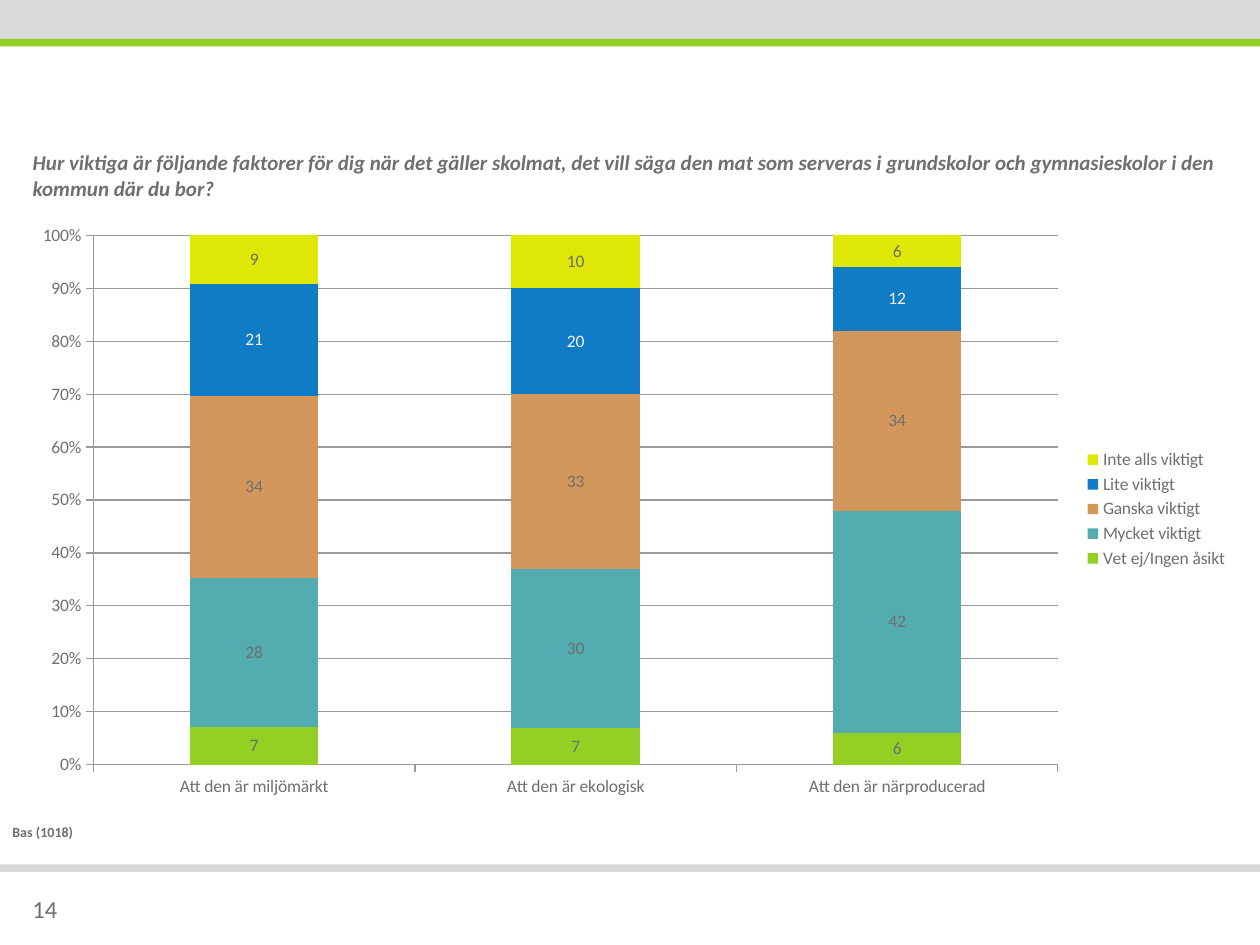
from lxml.etree import SubElement
from pptx import Presentation
from pptx.chart.data import CategoryChartData
from pptx.dml.color import RGBColor
from pptx.enum.chart import XL_CHART_TYPE, XL_LABEL_POSITION, XL_LEGEND_POSITION, XL_TICK_MARK
from pptx.enum.shapes import MSO_SHAPE
from pptx.enum.text import MSO_ANCHOR, MSO_AUTO_SIZE, PP_ALIGN
from pptx.oxml.ns import qn
from pptx.util import Inches, Pt

FONT = "Calibri"
GREY = RGBColor(0x6D, 0x6F, 0x71)
BAND = RGBColor(0xD9, 0xD9, 0xD9)
GREEN = RGBColor(0x93, 0xD0, 0x23)
TEAL = RGBColor(0x53, 0xAC, 0xAF)
TAN = RGBColor(0xD3, 0x97, 0x5B)
BLUE = RGBColor(0x11, 0x7C, 0xC6)
YELLOW = RGBColor(0xDE, 0xE7, 0x05)
PALE = RGBColor(0xF2, 0xF2, 0xF2)
LINE = RGBColor(0x9A, 0x9A, 0x9A)

QUESTION = ("Hur viktiga är följande faktorer för dig när det gäller skolmat, det vill säga "
            "den mat som serveras i grundskolor och gymnasieskolor i den kommun där du bor?")
BASE = "Bas (1018)"
PAGE = "14"
CATEGORIES = ["Att den är miljömärkt", "Att den är ekologisk", "Att den är närproducerad"]
SERIES = [
    ("Vet ej/Ingen åsikt", (7, 7, 6), GREEN, GREY),
    ("Mycket viktigt", (28, 30, 42), TEAL, GREY),
    ("Ganska viktigt", (34, 33, 34), TAN, GREY),
    ("Lite viktigt", (21, 20, 12), BLUE, PALE),
    ("Inte alls viktigt", (9, 10, 6), YELLOW, GREY),
]
BANDS = [(0, 0.31, BAND), (6.86, 0.06, BAND), (0.31, 0.06, GREEN)]
PLOT = {"x": 0.06, "y": 0.04, "w": 0.79, "h": 0.89}


def set_font(font, size, color=GREY, bold=False, italic=False):
    font.name, font.size, font.bold, font.italic = FONT, Pt(size), bold, italic
    font.color.rgb = color


def write(sp, text, box, size, anchor=MSO_ANCHOR.TOP, **style):
    sp.left, sp.top, sp.width, sp.height = map(Inches, box)
    tf = sp.text_frame
    tf.word_wrap = True
    tf.auto_size = MSO_AUTO_SIZE.NONE
    tf.vertical_anchor = anchor
    p = tf.paragraphs[0]
    p.alignment = PP_ALIGN.LEFT
    r = p.add_run()
    r.text = text
    set_font(r.font, size, **style)


def add_band(s, top, height, color):
    sp = s.shapes.add_shape(MSO_SHAPE.RECTANGLE, 0, Inches(top), Inches(10), Inches(height))
    sp.shadow.inherit = False
    sp.fill.solid()
    sp.fill.fore_color.rgb = color
    sp.line.fill.background()


def set_plot_layout(chart):
    area = chart._chartSpace.chart.plotArea
    for old in area.findall(qn("c:layout")):
        area.remove(old)
    layout = SubElement(area, qn("c:layout"))
    area.insert(0, layout)
    manual = SubElement(layout, qn("c:manualLayout"))
    values = {"layoutTarget": "inner", "xMode": "edge", "yMode": "edge", **PLOT}
    for tag, value in values.items():
        SubElement(manual, qn(f"c:{tag}")).set("val", str(value))


def add_answers(s):
    data = CategoryChartData(number_format="0")
    data.categories = CATEGORIES
    for name, values, _, _ in SERIES:
        data.add_series(name, values)
    chart = s.shapes.add_chart(XL_CHART_TYPE.COLUMN_STACKED_100, Inches(0.16), Inches(1.68),
                               Inches(9.69), Inches(4.72), data).chart
    set_font(chart.font, 10)
    chart.has_title = False
    chart.has_legend = True
    chart.legend.position = XL_LEGEND_POSITION.RIGHT
    chart.legend.include_in_layout = False
    set_font(chart.legend.font, 10)
    set_plot_layout(chart)

    for axis in (chart.category_axis, chart.value_axis):
        axis.major_tick_mark = XL_TICK_MARK.OUTSIDE
        axis.minor_tick_mark = XL_TICK_MARK.NONE
        axis.format.line.color.rgb = LINE
        set_font(axis.tick_labels.font, 10, bold=axis is chart.value_axis)
    axis = chart.value_axis
    axis.minimum_scale, axis.maximum_scale, axis.major_unit = 0, 1, 0.1
    axis.tick_labels.number_format = "0%"
    axis.tick_labels.number_format_is_linked = False
    axis.has_major_gridlines = True
    axis.major_gridlines.format.line.color.rgb = LINE

    plot = chart.plots[0]
    plot.gap_width, plot.overlap = 150, 100
    plot.vary_by_categories = False
    for series, (_, _, fill, label_color) in zip(plot.series, SERIES):
        series.format.fill.solid()
        series.format.fill.fore_color.rgb = fill
        labels = series.data_labels
        labels.show_value = True
        labels.position = XL_LABEL_POSITION.CENTER
        labels.number_format = "0"
        labels.number_format_is_linked = False
        set_font(labels.font, 10, label_color)


def main():
    prs = Presentation()
    prs.slide_width, prs.slide_height = Inches(10), Inches(7.5)
    s = prs.slides.add_slide(prs.slide_layouts[5])
    for band in BANDS:
        add_band(s, *band)
    add_answers(s)
    write(s.shapes.title, QUESTION, (0.16, 1.14, 9.69, 0.56), 12, bold=True, italic=True)
    write(s.shapes.add_textbox(0, 0, 0, 0), BASE, (0, 6.49, 10, 0.24), 8, bold=True)
    write(s.shapes.add_textbox(0, 0, 0, 0), PAGE, (0.16, 6.95, 0.77, 0.52), 14,
          anchor=MSO_ANCHOR.MIDDLE)
    prs.save("out.pptx")


if __name__ == "__main__":
    main()
